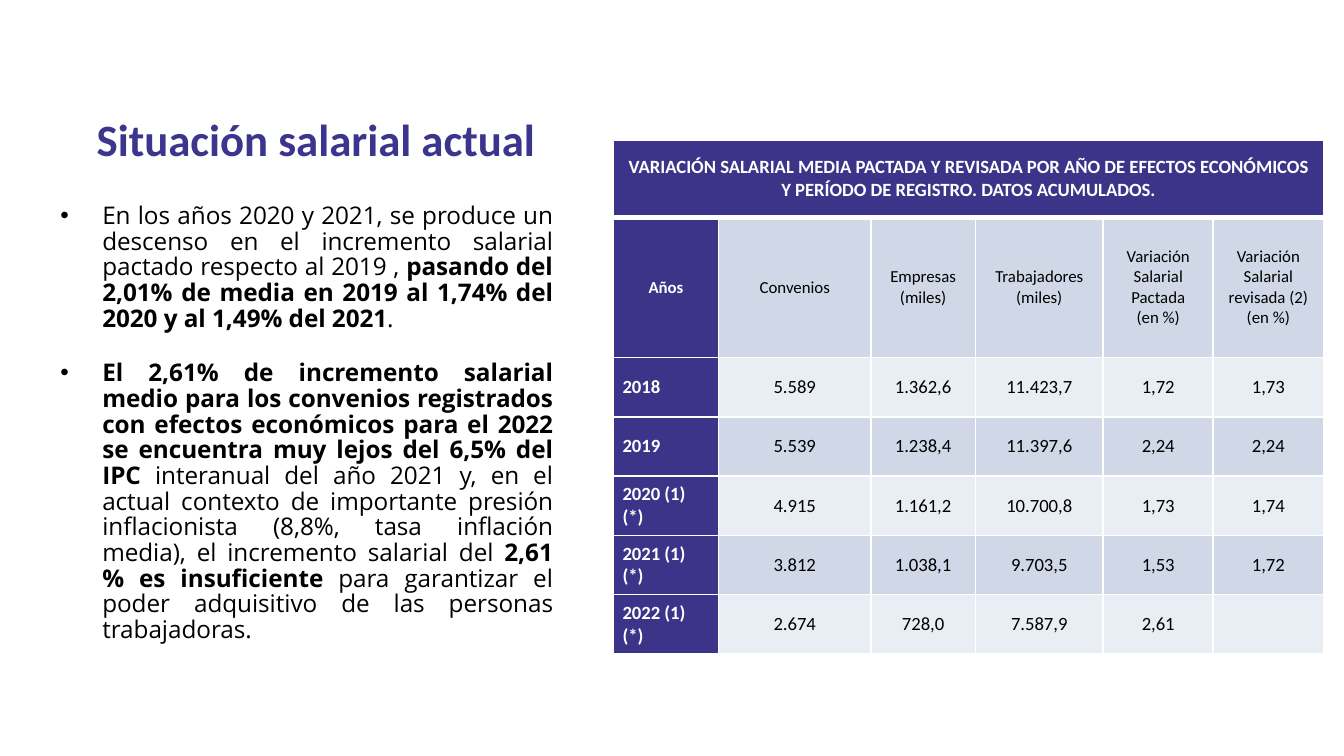
from pptx import Presentation
from pptx.dml.color import RGBColor
from pptx.enum.text import MSO_ANCHOR, MSO_AUTO_SIZE, PP_ALIGN
from pptx.oxml.ns import qn
from pptx.util import Pt
from lxml.etree import SubElement

INDIGO, VIOLET = "3B3489", "3C358E"
BLACK, WHITE = "000000", "FFFFFF"
BANDS = ("D0D8E8", "E9EDF4")


def color(code):
    return RGBColor.from_string(code)


class Deck:
    head = "Calibri"
    body = "Open Sans"

    def __init__(self, wide, high):
        self.prs = Presentation()
        self.prs.slide_width, self.prs.slide_height = Pt(wide), Pt(high)
        self.slide = self.prs.slides.add_slide(self.prs.slide_layouts[5])

    def font(self, para, name, size, code, bold=None):
        font = para.font
        font.name, font.size, font.bold = name, Pt(size), bold
        font.color.rgb = color(code)

    def title(self, text, left, top, wide, high):
        shape = self.slide.shapes.title
        shape.left, shape.top = Pt(left), Pt(top)
        shape.width, shape.height = Pt(wide), Pt(high)
        frame = shape.text_frame
        frame.text = text
        frame.auto_size = MSO_AUTO_SIZE.NONE
        frame.vertical_anchor = MSO_ANCHOR.TOP
        para = frame.paragraphs[0]
        para.alignment = PP_ALIGN.LEFT
        self.font(para, self.head, 24, VIOLET, True)

    def bullets(self, items, left, top, wide, high):
        box = self.slide.shapes.add_textbox(Pt(left), Pt(top), Pt(wide), Pt(high))
        frame = box.text_frame
        frame.word_wrap = True
        for i, parts in enumerate(items):
            para = frame.add_paragraph() if i else frame.paragraphs[0]
            para.alignment = PP_ALIGN.JUSTIFY
            para.line_spacing = 0.88
            if i:
                para.space_before = Pt(15.6)
            # Hanging bullet
            props = para._p.get_or_add_pPr()
            props.set("marL", str(Pt(22.5)))
            props.set("indent", str(-Pt(22.5)))
            SubElement(props, qn("a:buFont")).set("typeface", "Arial")
            SubElement(props, qn("a:buChar")).set("char", "•")
            self.font(para, self.body, 13, BLACK)
            for text, bold in parts:
                run = para.add_run()
                run.text, run.font.bold = text, bold

    def border(self, cell, top, bottom):
        props = cell._tc.get_or_add_tcPr()
        sides = (("lnL", 1), ("lnR", 1), ("lnT", top), ("lnB", bottom))
        for i, (side, width) in enumerate(sides):
            line = SubElement(props, qn("a:" + side))
            line.set("w", str(Pt(width)))
            fill = SubElement(line, qn("a:solidFill"))
            SubElement(fill, qn("a:srgbClr")).set("val", WHITE)
            props.insert(i, line)

    def cell(self, cell, text, size, code, fill, bold, align):
        cell.fill.solid()
        cell.fill.fore_color.rgb = color(fill)
        cell.vertical_anchor = MSO_ANCHOR.MIDDLE
        cell.margin_left = cell.margin_right = Pt(5)
        cell.margin_top = cell.margin_bottom = 0
        cell.text = text
        for para in cell.text_frame.paragraphs:
            para.alignment = align
            self.font(para, self.head, size, code, bold)

    def table(self, banner, rows, left, top, cols, highs):
        frame = self.slide.shapes.add_table(
            len(highs), len(cols), Pt(left), Pt(top), Pt(sum(cols)), Pt(sum(highs)))
        grid = frame.table
        for col, wide in zip(grid.columns, cols):
            col.width = Pt(wide)
        for row, high in zip(grid.rows, highs):
            row.height = Pt(high)
        # Banner across all columns
        grid.cell(0, 0).merge(grid.cell(0, len(cols) - 1))
        self.cell(grid.cell(0, 0), banner, 10, WHITE, INDIGO, True, PP_ALIGN.CENTER)
        for c in range(len(cols)):
            self.border(grid.cell(0, c), 1, 3)
        # Column heads, then one row a year
        for r, row in enumerate(rows, 1):
            size = 9 if r == 1 else 10
            for c, text in enumerate(row):
                cell = grid.cell(r, c)
                year = c == 0
                align = PP_ALIGN.LEFT if year and r > 1 else PP_ALIGN.CENTER
                code, fill = (WHITE, INDIGO) if year else (BLACK, BANDS[(r - 1) % 2])
                self.cell(cell, text, size, code, fill, year, align)
                self.border(cell, 3 if r == 1 else 1, 1)


deck = Deck(720, 405)

# Title
deck.title("Situación salarial actual", 44.6, 56.2, 581.8, 36)

# Key points
deck.bullets([
    [("En los años 2020 y 2021, se produce un descenso en el incremento "
      "salarial pactado respecto al 2019 , ", False),
     ("pasando del 2,01% de media en 2019 al 1,74% del 2020 y al 1,49% del 2021", True),
     (".", False)],
    [("El 2,61% de incremento salarial medio para los convenios registrados "
      "con efectos económicos para el 2022 se encuentra muy lejos del 6,5% "
      "del IPC ", True),
     ("interanual del año 2021 y, en el actual contexto de importante presión "
      "inflacionista (8,8%, tasa inflación media), el incremento salarial del ", False),
     ("2,61 % es insuficiente ", True),
     ("para garantizar el poder adquisitivo de las personas trabajadoras.", False)],
], 25.2, 105.8, 278, 227.5)

# Wage table
rows = [
    ("Años", "Convenios", "Empresas (miles)", "Trabajadores (miles)",
     "Variación Salarial Pactada\n(en %)", "Variación Salarial revisada (2)\n(en %)"),
    ("2018", "5.589", "1.362,6", "11.423,7", "1,72", "1,73"),
    ("2019", "5.539", "1.238,4", "11.397,6", "2,24", "2,24"),
    ("2020 (1) (*)", "4.915", "1.161,2", "10.700,8", "1,73", "1,74"),
    ("2021 (1) (*)", "3.812", "1.038,1", "9.703,5", "1,53", "1,72"),
    ("2022 (1) (*)", "2.674", "728,0", "7.587,9", "2,61", ""),
]
deck.table(
    "VARIACIÓN SALARIAL MEDIA PACTADA Y REVISADA POR AÑO DE EFECTOS ECONÓMICOS "
    "Y PERÍODO DE REGISTRO. DATOS ACUMULADOS.",
    rows, 328.5, 75, [56.5, 81.5, 56, 68.5, 59, 59], [41.5, 75] + [31.8] * 5)

deck.prs.save("out.pptx")
